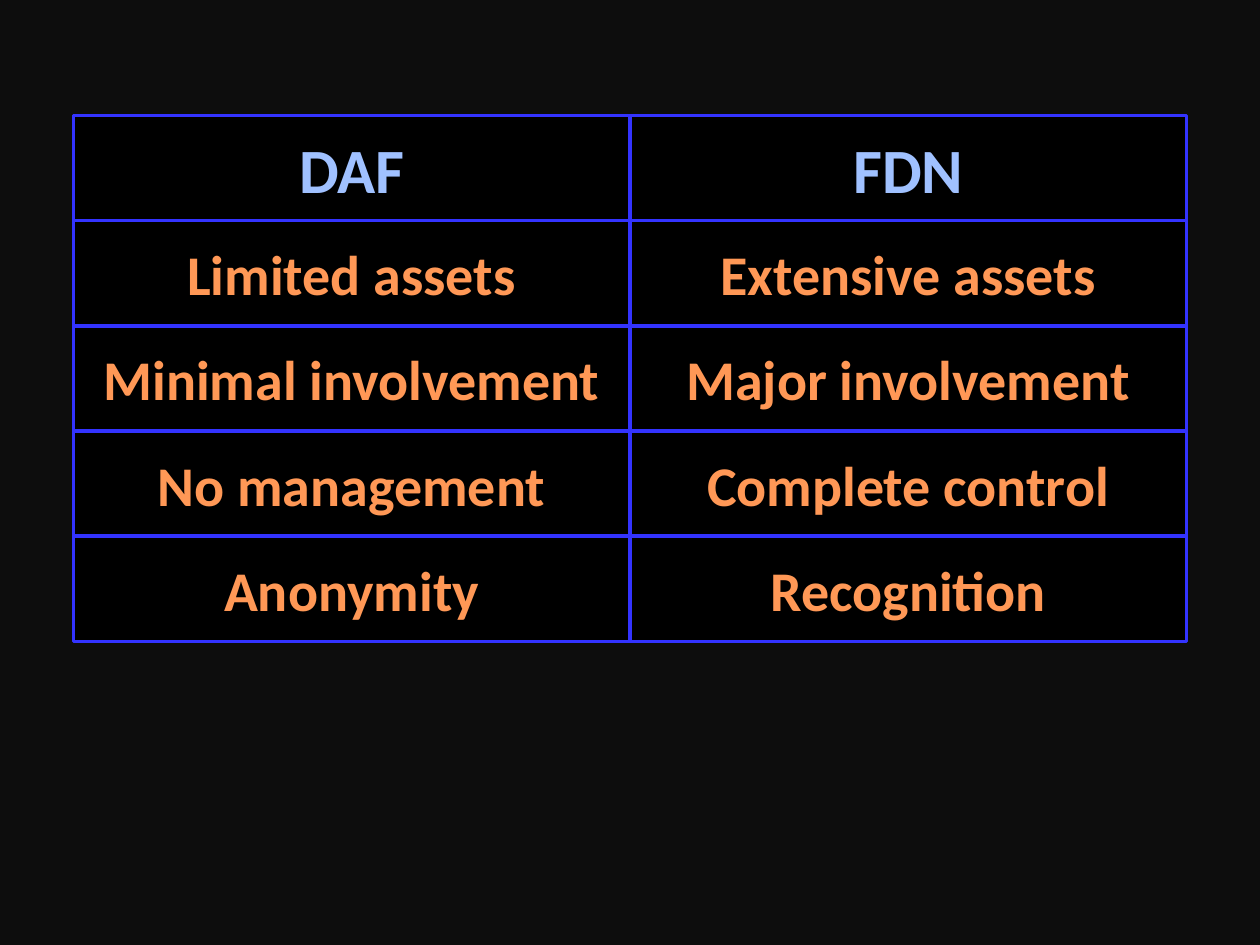
"""Build a slide that compares a DAF with an FDN in a two-column grid."""
from pptx import Presentation
from pptx.dml.color import RGBColor
from pptx.enum.shapes import MSO_SHAPE
from pptx.enum.text import MSO_ANCHOR, PP_ALIGN
from pptx.util import Cm, Pt

BACKGROUND = RGBColor(0x0D, 0x0D, 0x0D)
CELL_FILL = RGBColor(0x00, 0x00, 0x00)
CELL_LINE = RGBColor(0x33, 0x33, 0xFF)
HEADING = RGBColor(0xA0, 0xC1, 0xFF)
BODY = RGBColor(0xFF, 0x98, 0x56)

LEFT, TOP, CELL_WIDTH, CELL_HEIGHT = 1.48, 2.33, 11.22, 2.12

COMPARISON = [
    ("DAF", "FDN"),
    ("Limited assets", "Extensive assets"),
    ("Minimal involvement", "Major involvement"),
    ("No management", "Complete control"),
    ("Anonymity", "Recognition"),
]


class ComparisonSlide:
    heading_format = {"name": "Calibri", "size": Pt(36), "bold": True}
    body_format = {"name": "Calibri", "size": Pt(32), "bold": True}

    def __init__(self, presentation):
        self.slide = presentation.slides.add_slide(presentation.slide_layouts[6])
        background = self.slide.background.fill
        background.solid()
        background.fore_color.rgb = BACKGROUND

    def add_cell(self, text, row, column):
        shape = self.slide.shapes.add_shape(
            MSO_SHAPE.RECTANGLE,
            Cm(LEFT + column * CELL_WIDTH),
            Cm(TOP + row * CELL_HEIGHT),
            Cm(CELL_WIDTH),
            Cm(CELL_HEIGHT),
        )
        shape.shadow.inherit = False
        shape.fill.solid()
        shape.fill.fore_color.rgb = CELL_FILL
        shape.line.color.rgb = CELL_LINE
        shape.line.width = Pt(2)
        shape.text_frame.word_wrap = True
        shape.text_frame.vertical_anchor = MSO_ANCHOR.MIDDLE
        paragraph = shape.text_frame.paragraphs[0]
        paragraph.alignment = PP_ALIGN.CENTER
        run = paragraph.add_run()
        run.text = text
        run.font.color.rgb = BODY if row else HEADING
        font_format = self.body_format if row else self.heading_format
        for attribute, value in font_format.items():
            setattr(run.font, attribute, value)

    def add_grid(self, rows):
        for row, texts in enumerate(rows):
            for column, text in enumerate(texts):
                self.add_cell(text, row, column)


def main():
    presentation = Presentation()
    presentation.slide_width = Cm(25.4)
    presentation.slide_height = Cm(19.05)
    ComparisonSlide(presentation).add_grid(COMPARISON)
    presentation.save("out.pptx")


if __name__ == "__main__":
    main()
